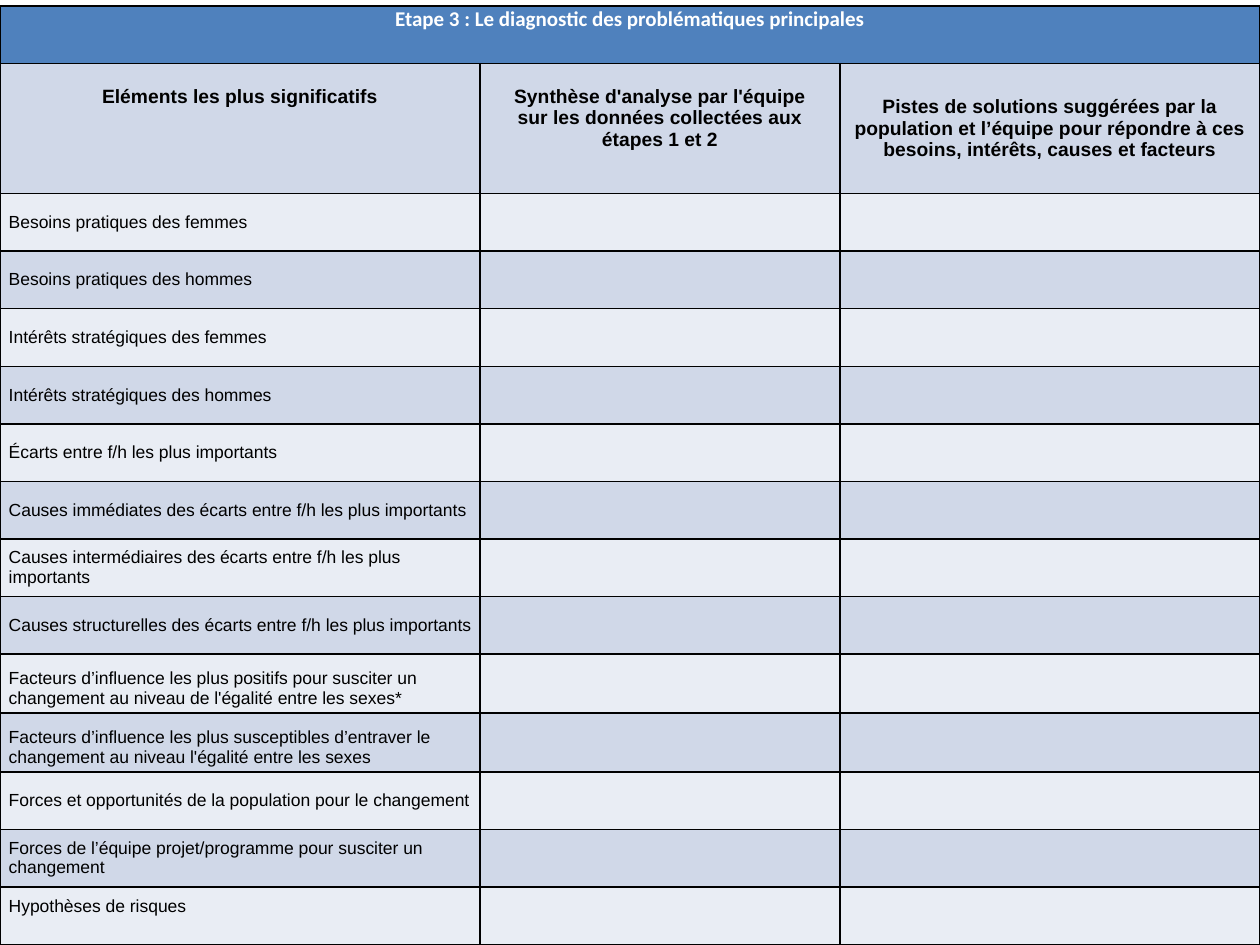
"""Build the step 3 diagnostic table slide."""
import dataclasses

import lxml.etree
import pptx
import pptx.dml.color
import pptx.enum.text
import pptx.oxml.ns
import pptx.table
import pptx.util

Pt = pptx.util.Pt
RGBColor = pptx.dml.color.RGBColor
Align = pptx.enum.text.PP_ALIGN
Anchor = pptx.enum.text.MSO_ANCHOR

BLACK = RGBColor(0x00, 0x00, 0x00)
WHITE = RGBColor(0xFF, 0xFF, 0xFF)
TITLE_BLUE = RGBColor(0x4F, 0x81, 0xBD)
DARK_BAND = RGBColor(0xD0, 0xD8, 0xE8)
LIGHT_BAND = RGBColor(0xE9, 0xED, 0xF4)

TABLE_TOP = 3.5
COLUMN_WIDTHS = (274.3, 205.7, 240)
TITLE_HEIGHT = 32.9
HEADING_HEIGHT = 74.3
HEADING_OFFSET = 12.65
SIDE_MARGIN = 5
BORDER_WIDTH = 1


@dataclasses.dataclass(frozen=True)
class Heading:
    text: str
    anchor: Anchor = Anchor.TOP
    top_margin: float = HEADING_OFFSET


@dataclasses.dataclass(frozen=True)
class Topic:
    text: str
    height: float = 32.9
    anchor: Anchor = Anchor.MIDDLE
    top_margin: float = 0


TITLE = "Etape 3\u00a0: Le diagnostic des problématiques principales".replace("\u00a0", " ")
HEADINGS = (
    Heading("Eléments les plus significatifs"),
    Heading("Synthèse d'analyse par l'équipe\nsur les données collectées aux étapes 1 et 2"),
    Heading("Pistes de solutions suggérées par la population et l’équipe pour répondre "
            "à ces besoins, intérêts, causes et facteurs", Anchor.MIDDLE, 0),
)
TOPICS = (
    Topic("Besoins pratiques des femmes"),
    Topic("Besoins pratiques des hommes"),
    Topic("Intérêts stratégiques des femmes"),
    Topic("Intérêts stratégiques des hommes"),
    Topic("Écarts entre f/h les plus importants"),
    Topic("Causes immédiates des écarts entre f/h les plus importants"),
    Topic("Causes intermédiaires des écarts entre f/h les plus importants"),
    Topic("Causes structurelles des écarts entre f/h les plus importants"),
    Topic("Facteurs d’influence les plus positifs pour susciter un changement "
          "au niveau de l'égalité entre les sexes*", height=33.7, top_margin=5.75),
    Topic("Facteurs d’influence les plus susceptibles d’entraver le changement "
          "au niveau l'égalité entre les sexes", height=33.7, top_margin=5.75),
    Topic("Forces et opportunités de la population pour le changement"),
    Topic("Forces de l’équipe projet/programme pour susciter un changement"),
    Topic("Hypothèses de risques", anchor=Anchor.TOP, top_margin=5.75),
)


def style_cell(cell: pptx.table._Cell, fill: RGBColor) -> None:
    """Give a cell its margins, black borders and fill."""
    cell.margin_left = cell.margin_right = Pt(SIDE_MARGIN)
    cell.margin_top = cell.margin_bottom = Pt(0)
    properties = cell._tc.get_or_add_tcPr()
    for side in ("a:lnL", "a:lnR", "a:lnT", "a:lnB"):
        line = lxml.etree.SubElement(properties, pptx.oxml.ns.qn(side), w=str(Pt(BORDER_WIDTH)))
        solid = lxml.etree.SubElement(line, pptx.oxml.ns.qn("a:solidFill"))
        lxml.etree.SubElement(solid, pptx.oxml.ns.qn("a:srgbClr"), val=str(BLACK))
    cell.fill.solid()
    cell.fill.fore_color.rgb = fill


def write_text(cell: pptx.table._Cell, text: str, *, size: float, font: str = "Arial",
               color: RGBColor = BLACK, bold: bool = False, align: Align = Align.LEFT,
               anchor: Anchor = Anchor.TOP, top_margin: float = 0) -> None:
    """Write the text in a cell, one paragraph for each line."""
    cell.text = text
    cell.vertical_anchor = anchor
    cell.margin_top = Pt(top_margin)
    for paragraph in cell.text_frame.paragraphs:
        paragraph.alignment = align
        for run in paragraph.runs:
            run.font.name = font
            run.font.size = Pt(size)
            run.font.bold = bold
            run.font.color.rgb = color


def add_diagnostic_table(slide: pptx.slide.Slide) -> pptx.table.Table:
    """Add the empty table with its sizes, borders and bands."""
    heights = (TITLE_HEIGHT, HEADING_HEIGHT, *(topic.height for topic in TOPICS))
    table = slide.shapes.add_table(
        len(heights), len(COLUMN_WIDTHS), Pt(0), Pt(TABLE_TOP),
        Pt(sum(COLUMN_WIDTHS)), Pt(sum(heights))).table
    table.first_row = table.horz_banding = False
    for column, width in zip(table.columns, COLUMN_WIDTHS):
        column.width = Pt(width)
    for index, (row, height) in enumerate(zip(table.rows, heights)):
        row.height = Pt(height)
        band = DARK_BAND if index % 2 else LIGHT_BAND
        for cell in row.cells:
            style_cell(cell, band if index else TITLE_BLUE)
    table.cell(0, 0).merge(table.cell(0, len(COLUMN_WIDTHS) - 1))
    return table


def main() -> None:
    """Create the presentation and save it."""
    presentation = pptx.Presentation()
    presentation.slide_width = Pt(720)
    presentation.slide_height = Pt(540)
    slide = presentation.slides.add_slide(presentation.slide_layouts[6])
    table = add_diagnostic_table(slide)
    write_text(table.cell(0, 0), TITLE, size=12, font="Calibri", color=WHITE,
               bold=True, align=Align.CENTER)
    for column, heading in enumerate(HEADINGS):
        write_text(table.cell(1, column), heading.text, size=11, bold=True, align=Align.CENTER,
                   anchor=heading.anchor, top_margin=heading.top_margin)
    for row, topic in enumerate(TOPICS, start=2):
        write_text(table.cell(row, 0), topic.text, size=10, anchor=topic.anchor,
                   top_margin=topic.top_margin)
    presentation.save("out.pptx")


if __name__ == "__main__":
    main()
